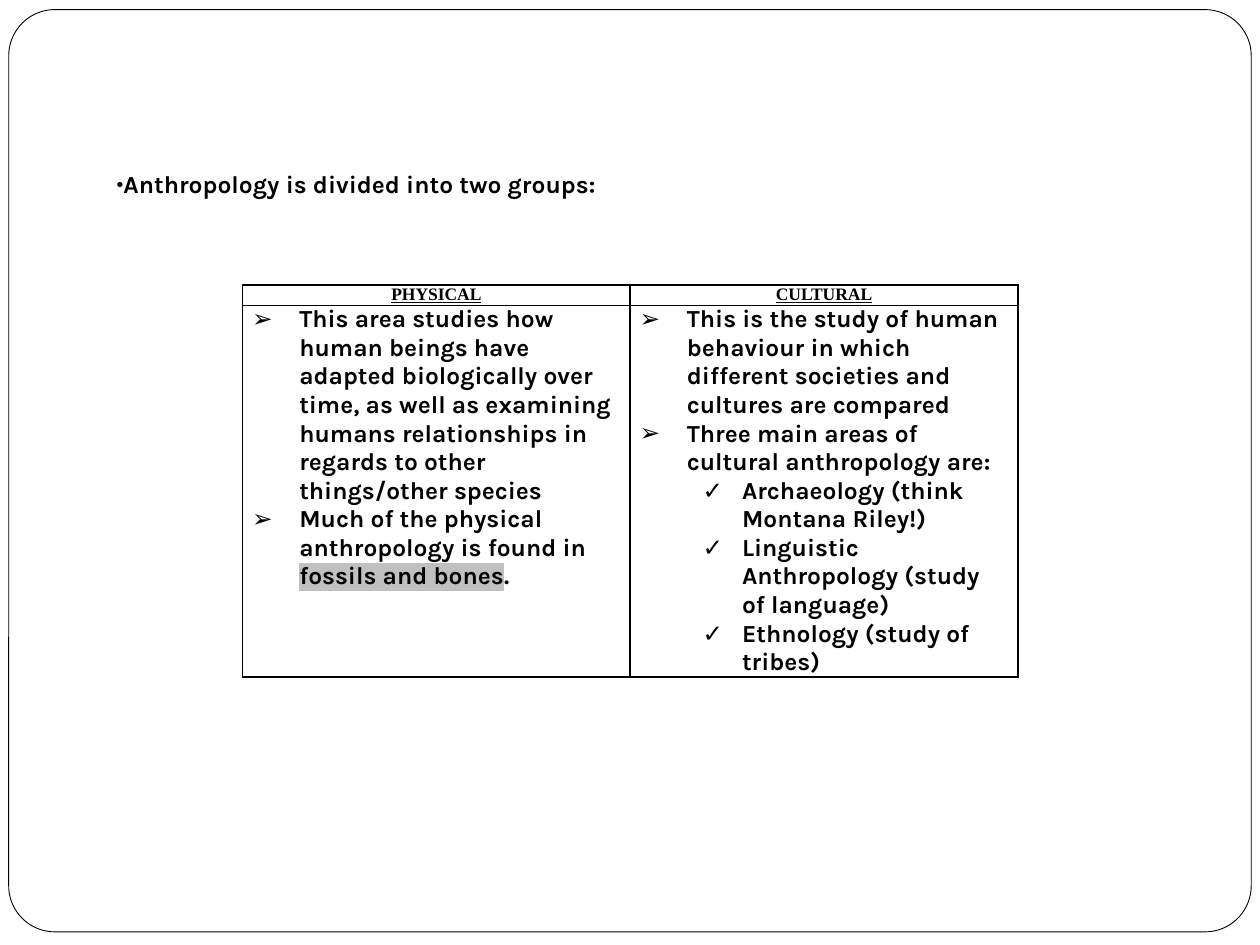
from dataclasses import dataclass

from lxml.etree import SubElement
from pptx import Presentation
from pptx.dml.color import RGBColor
from pptx.enum.shapes import MSO_SHAPE
from pptx.enum.text import MSO_ANCHOR, PP_ALIGN
from pptx.oxml import parse_xml
from pptx.oxml.ns import nsdecls, qn
from pptx.util import Pt

BLACK = RGBColor(0, 0, 0)
WHITE = RGBColor(255, 255, 255)
GREY = RGBColor(0xC0, 0xC0, 0xC0)

HEAD = {"name": "Times New Roman", "size": Pt(10), "bold": True, "underline": True}
BODY = {"name": "Karla", "size": Pt(14), "bold": True, "underline": False}
CELL = {"margin_left": Pt(5.4), "margin_right": Pt(5.4), "margin_top": 0, "margin_bottom": 0}
BOX = {"margin_left": Pt(7.2), "margin_right": Pt(7.2), "margin_top": Pt(4),
       "margin_bottom": 0, "word_wrap": True, "vertical_anchor": MSO_ANCHOR.TOP}


@dataclass(frozen=True)
class Mark:
    char: str
    left: float
    hang: float
    level: int = 0


DOT = Mark("•", 0, 0)
ARROW = Mark("➢", 27, 27)
CHECK = Mark("✓", 58.5, 22.5, 1)


@dataclass(frozen=True)
class Item:
    mark: Mark
    text: str
    lit: str = ""
    tail: str = ""


@dataclass(frozen=True)
class Group:
    title: str
    items: tuple[Item, ...]


GROUPS = (
    Group("PHYSICAL", (
        Item(ARROW, "This area studies how human beings have adapted biologically over time, "
                    "as well as examining humans relationships in regards to other "
                    "things/other species"),
        Item(ARROW, "Much of the physical anthropology is found in ", "fossils and bones", "."),
    )),
    Group("CULTURAL", (
        Item(ARROW, "This is the study of human behaviour in which different societies "
                    "and cultures are compared"),
        Item(ARROW, "Three main areas of cultural anthropology are:"),
        Item(CHECK, "Archaeology (think Montana Riley!)"),
        Item(CHECK, "Linguistic Anthropology (study of language)"),
        Item(CHECK, "Ethnology (study of tribes)"),
    )),
)


def apply(target, values: dict) -> None:
    for name, value in values.items():
        setattr(target, name, value)


def add_run(para, text: str, style: dict):
    run = para.add_run()
    run.text = text
    apply(run.font, style)
    run.font.color.rgb = BLACK
    return run


def light(run) -> None:
    """Put a grey highlight behind the run."""
    mark = parse_xml(f'<a:highlight {nsdecls("a")}><a:srgbClr val="{GREY}"/></a:highlight>')
    run.font._element.find(qn("a:latin")).addprevious(mark)


def add_items(frame, items: tuple[Item, ...]) -> None:
    for i, item in enumerate(items):
        para = frame.add_paragraph() if i else frame.paragraphs[0]
        mark = item.mark
        para.level = mark.level
        props = para._p.get_or_add_pPr()
        props.set("marL", str(Pt(mark.left)))
        props.set("indent", str(-Pt(mark.hang)))
        SubElement(props, qn("a:buFont"), typeface=BODY["name"])
        SubElement(props, qn("a:buChar"), char=mark.char)
        add_run(para, item.text, BODY)
        if item.lit:
            light(add_run(para, item.lit, BODY))
        if item.tail:
            add_run(para, item.tail, BODY)


def dress(cell) -> None:
    """Set the margins, black borders and white fill of a cell."""
    apply(cell, CELL)
    props = cell._tc.get_or_add_tcPr()
    for side in ("lnL", "lnR", "lnT", "lnB"):
        line = SubElement(props, qn(f"a:{side}"), w=str(Pt(1)))
        fill = SubElement(line, qn("a:solidFill"))
        SubElement(fill, qn("a:srgbClr"), val=str(BLACK))
    cell.fill.solid()
    cell.fill.fore_color.rgb = WHITE


def add_frame(slide) -> None:
    frame = slide.shapes.add_shape(MSO_SHAPE.ROUNDED_RECTANGLE,
                                   Pt(5), Pt(5.5), Pt(710), Pt(527))
    frame.adjustments[0] = 0.05
    frame.shadow.inherit = False
    frame.fill.solid()
    frame.fill.fore_color.rgb = WHITE
    frame.line.color.rgb = BLACK
    frame.line.width = Pt(0.5)


def add_groups(slide) -> None:
    table = slide.shapes.add_table(2, len(GROUPS), Pt(138.6), Pt(163),
                                   Pt(443), Pt(214)).table
    apply(table, {"first_row": False, "horz_banding": False})
    for row, height in zip(table.rows, (11.5, 202.5)):
        row.height = Pt(height)
    for col, group in enumerate(GROUPS):
        table.columns[col].width = Pt(221.5)
        head, body = table.cell(0, col), table.cell(1, col)
        dress(head)
        dress(body)
        para = head.text_frame.paragraphs[0]
        para.alignment = PP_ALIGN.CENTER
        add_run(para, group.title, HEAD)
        add_items(body.text_frame, group.items)


def add_lead(slide) -> None:
    box = slide.shapes.add_textbox(Pt(59.6), Pt(92.5), Pt(660), Pt(42.5))
    apply(box.text_frame, BOX)
    add_items(box.text_frame, (Item(DOT, "Anthropology is divided into two groups:"),))


def main() -> None:
    deck = Presentation()
    apply(deck, {"slide_width": Pt(720), "slide_height": Pt(540)})
    slide = deck.slides.add_slide(deck.slide_layouts[6])
    add_frame(slide)
    add_groups(slide)
    add_lead(slide)
    deck.save("out.pptx")


if __name__ == "__main__":
    main()
